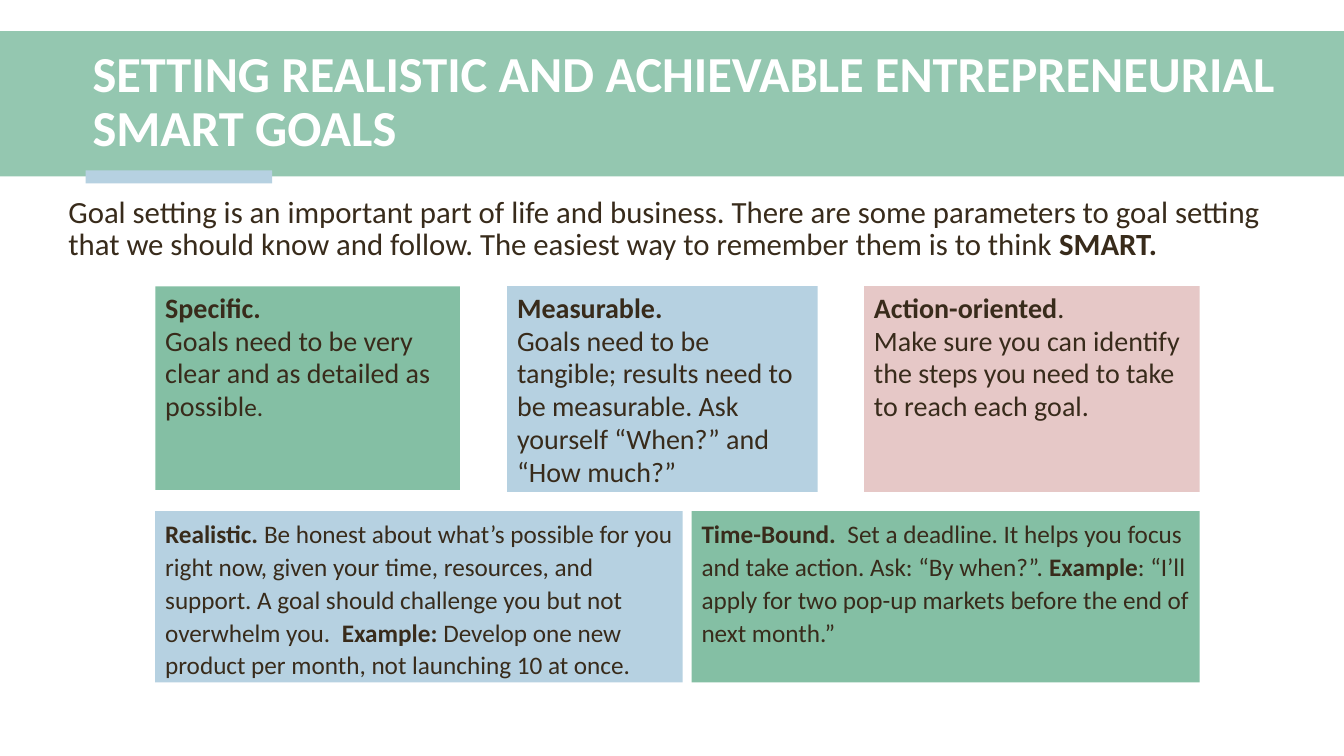
"""Build the slide on setting SMART entrepreneurial goals."""
from pptx import Presentation
from pptx import util as u
from pptx.dml.color import RGBColor
from pptx.enum import shapes, text

COLORS = {"band": "94C7B0", "green": "84BFA4", "blue": "B6D1E1",
          "pink": "E6C8C7", "ink": "382B1B", "white": "FFFFFF"}


def add_rect(left, top, width, height, color):
    sp = s.shapes.add_shape(shapes.MSO_SHAPE.RECTANGLE, u.Inches(left), u.Inches(top),
                            u.Inches(width), u.Inches(height))
    sp.shadow.inherit = False
    sp.fill.solid()
    sp.fill.fore_color.rgb = RGBColor.from_string(COLORS[color])
    sp.line.fill.background()
    return sp


def write(sp, paragraphs, size, color="ink", spacing=u.Pt(23.4), anchor=text.MSO_ANCHOR.TOP):
    tf = sp.text_frame
    tf.word_wrap = True
    tf.vertical_anchor = anchor
    for i, runs in enumerate(paragraphs):
        p = tf.paragraphs[0] if i == 0 else tf.add_paragraph()
        p.alignment = text.PP_ALIGN.LEFT
        p.line_spacing = spacing
        p.font.name = "Calibri"
        p.font.size = u.Pt(size)
        p.font.color.rgb = RGBColor.from_string(COLORS[color])
        for words, bold, *own_size in runs:
            r = p.add_run()
            r.text = words
            r.font.bold = bold
            if own_size:
                r.font.size = u.Pt(own_size[0])


prs = Presentation()
prs.slide_width, prs.slide_height = u.Inches(13.33), u.Inches(7.5)
s = prs.slides.add_slide(prs.slide_layouts[6])

add_rect(0, 0.31, 13.33, 1.44, "band")
add_rect(0.85, 1.69, 1.85, 0.13, "blue")

title = s.shapes.add_textbox(u.Inches(0.82), u.Inches(0.41), u.Inches(12.27), u.Inches(1.23))
write(title, [[("SETTING REALISTIC AND ACHIEVABLE ENTREPRENEURIAL SMART GOALS", True)]],
      36, "white", 0.9, text.MSO_ANCHOR.MIDDLE)
title.text_frame.paragraphs[0].space_before = u.Pt(10)

intro = s.shapes.add_textbox(u.Inches(0.58), u.Inches(1.9), u.Inches(12.45), u.Inches(0.8))
write(intro, [[("Goal setting is an important part of life and business. There are some "
                "parameters to goal setting that we should know and follow. The easiest way "
                "to remember them is to think ", False), ("SMART.", True)]], 22)

goals = [
    (1.54, 2.84, 3.02, 2.02, "green", 20, [
        [("Specific.", True)],
        [("Goals need to be very clear and as detailed as possibl", False), ("e.", False, 18)]]),
    (5.03, 2.84, 3.08, 2.04, "blue", 20, [
        [("Measurable.", True)],
        [("Goals need to be tangible; results need to be measurable. "
          "Ask yourself “When?” and “How much?”", False)]]),
    (8.57, 2.84, 3.33, 2.04, "pink", 20, [
        [("Action-oriented", True), (".", False)],
        [("Make sure you can identify the steps you need to take to reach each goal.", False)]]),
    (1.54, 5.07, 5.23, 1.7, "blue", 18, [
        [("Realistic. ", True),
         ("Be honest about what’s possible for you right now, given your time, resources, and "
          "support. A goal should challenge you but not overwhelm you.  ", False),
         ("Example: ", True),
         ("Develop one new product per month, not launching 10 at once.", False)]]),
    (6.86, 5.07, 5.04, 1.7, "green", 18, [
        [("Time-Bound.  ", True),
         ("Set a deadline. It helps you focus and take action. Ask: “By when?”. ", False),
         ("Example", True),
         (": “I’ll apply for two pop-up markets before the end of next month.”", False)]]),
]
for left, top, width, height, color, size, paragraphs in goals:
    write(add_rect(left, top, width, height, color), paragraphs, size)

prs.save("out.pptx")
